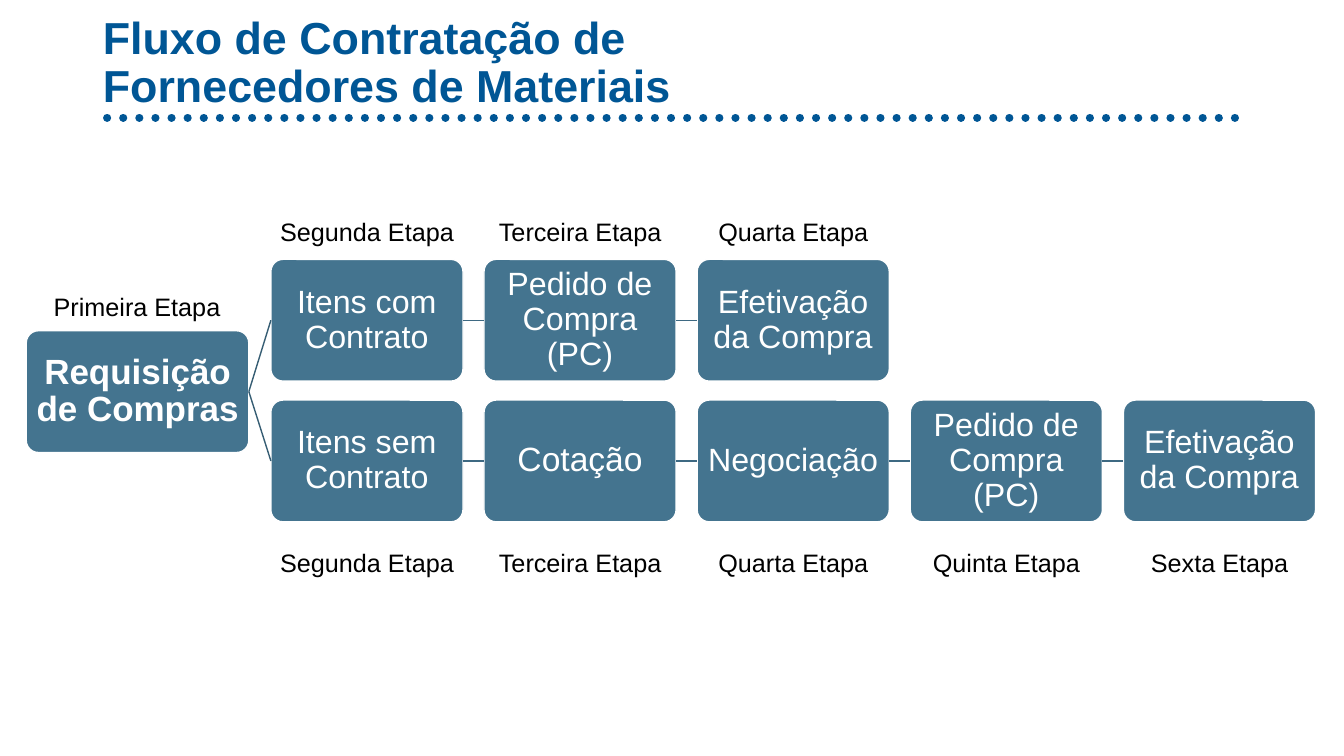
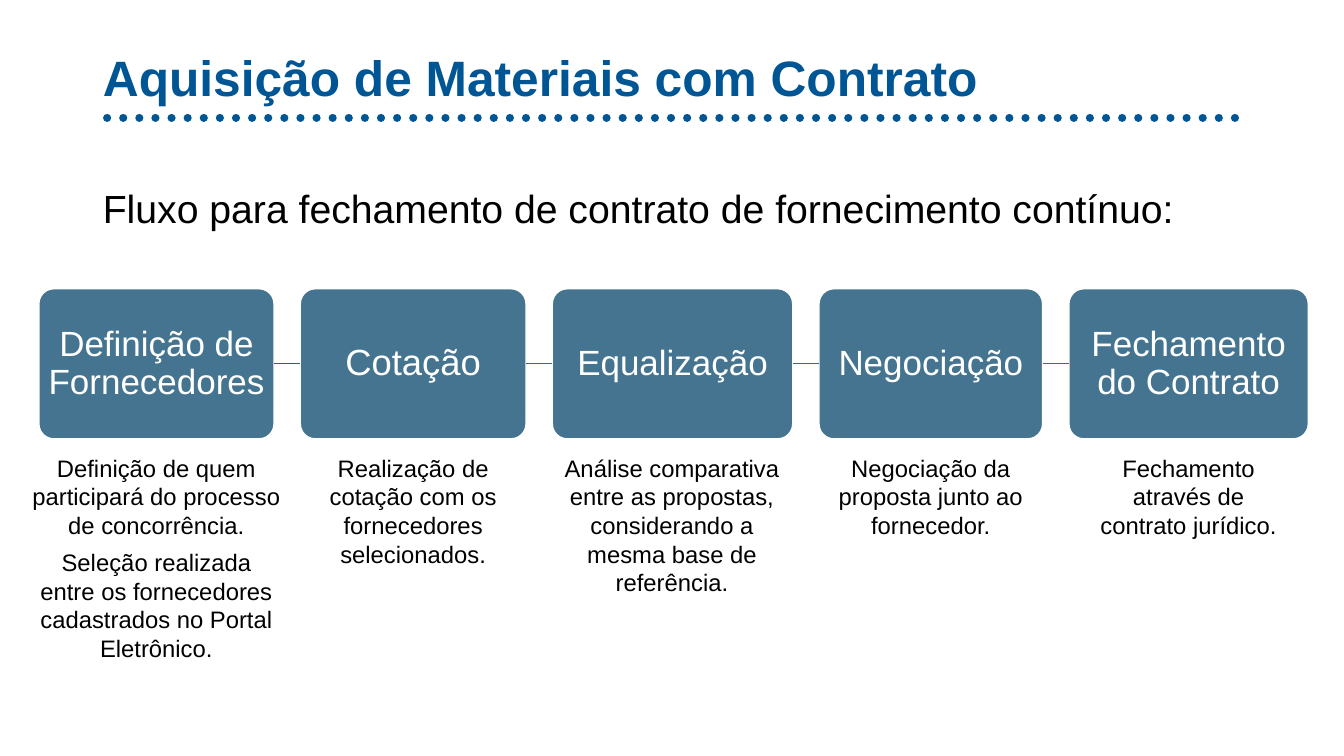
from copy import deepcopy
from dataclasses import dataclass

from pptx import Presentation
from pptx import util as u
from pptx.dml.color import RGBColor
from pptx.enum import dml, shapes, text
from pptx.oxml import ns
from pptx.oxml.xmlchemy import OxmlElement

PX = 9525  # EMU in one px, 96 px to the inch
LEFT, MID, JUST = text.PP_ALIGN.LEFT, text.PP_ALIGN.CENTER, text.PP_ALIGN.JUSTIFY


@dataclass(frozen=True)
class Theme:
    font: str = "Arial"
    blue: str = "005695"
    steel: str = "44748F"
    deep: str = "365D73"
    link: str = "3E6982"
    white: str = "FFFFFF"
    black: str = "000000"
    label: float = 18
    note: float = 17
    lead: float = 28
    step: float = 23
    stage: float = 25


@dataclass(frozen=True)
class Rect:
    x: int
    y: int
    w: int
    h: int

    def emu(self) -> tuple:
        return tuple(u.Emu(n * PX) for n in (self.x, self.y, self.w, self.h))

    def under(self, y: int, w: int, h: int) -> "Rect":
        """Area of the given size, centred on this one across the slide."""
        return Rect(self.x + (self.w - w) // 2, y, w, h)


@dataclass(frozen=True)
class Step:
    name: str
    label: str
    size: float = 23


@dataclass(frozen=True)
class Stage:
    name: str
    wide: int
    span: int  # width of the notes
    notes: tuple
    size: float = 25


T = Theme()


# Text and drawing helpers
def rgb(code: str) -> RGBColor:
    return RGBColor.from_string(code)


def write(frame, *paras: str, size: float, color: str = T.black, bold: bool = False,
          align=MID, lead: float = 1.0, after: float = 0,
          anchor=text.MSO_ANCHOR.TOP, inset: tuple = (10, 5)) -> None:
    frame.word_wrap = True
    frame.auto_size = text.MSO_AUTO_SIZE.NONE
    frame.vertical_anchor = anchor
    frame.margin_left = frame.margin_right = u.Emu(inset[0] * PX)
    frame.margin_top = frame.margin_bottom = u.Emu(inset[1] * PX)
    for i, words in enumerate(paras):
        para = frame.add_paragraph() if i else frame.paragraphs[0]
        para.text = words
        para.alignment, para.line_spacing = align, lead
        para.space_before, para.space_after = u.Pt(0), u.Pt(after)
        for run in para.runs:
            font = run.font
            font.name, font.size, font.bold = T.font, u.Pt(size), bold
            font.color.rgb = rgb(color)
        for gap in para._p.findall(ns.qn("a:br")):
            gap.append(deepcopy(para.runs[0]._r.rPr))


def add_text(slide, area: Rect, *paras: str, **style) -> None:
    write(slide.shapes.add_textbox(*area.emu()).text_frame, *paras, **style)


def add_line(slide, ends: tuple, color: str, wide: float):
    line = slide.shapes.add_connector(shapes.MSO_CONNECTOR.STRAIGHT,
                                      *(u.Emu(n * PX) for n in ends))
    line.line.color.rgb, line.line.width = rgb(color), u.Pt(wide)
    line._element.spPr.append(OxmlElement("a:effectLst"))
    return line


def add_box(slide, area: Rect, words: str, size: float, bold: bool = False):
    box = slide.shapes.add_shape(shapes.MSO_SHAPE.ROUNDED_RECTANGLE, *area.emu())
    box.adjustments[0] = 0.1
    box.shadow.inherit = False
    box.fill.solid()
    box.fill.fore_color.rgb = rgb(T.steel)
    box.line.color.rgb, box.line.width = rgb(T.white), u.Pt(1)
    write(box.text_frame, words, size=size, color=T.white, bold=bold, lead=0.9,
          anchor=text.MSO_ANCHOR.MIDDLE, inset=(2, 2))
    return box


def join(slide, start, end, color: str) -> None:
    line = add_line(slide, (0, 0, 0, 0), color, 1)
    line.begin_connect(start, 3)
    line.end_connect(end, 1)


def add_slide(deck, title: str, area: Rect, size: float):
    slide = deck.slides.add_slide(deck.slide_layouts[5])
    rule = add_line(slide, (102, 112, 1187, 112), T.blue, 5.75).line
    rule.dash_style = dml.MSO_LINE.ROUND_DOT
    rule._get_or_add_ln().set("cap", "rnd")
    head = slide.shapes.title
    head.left, head.top, head.width, head.height = area.emu()
    write(head.text_frame, title, size=size, color=T.blue, bold=True, align=LEFT,
          lead=0.9, anchor=text.MSO_ANCHOR.MIDDLE)
    return slide


# Slide 1: two branches from one request
def add_label(slide, area: Rect, y: int, words: str) -> None:
    add_text(slide, area.under(y, 195, 48), words, size=T.label, lead=1.6, after=9)


def add_branch(slide, root, y: int, tag: int, steps: tuple) -> None:
    last, color = root, T.deep
    for i, step in enumerate(steps):
        area = Rect(258 + 203 * i, y, 183, 116)
        box = add_box(slide, area, step.name, step.size)
        join(slide, last, box, color)
        add_label(slide, area, tag, step.label)
        last, color = box, T.link


def hiring(deck) -> None:
    slide = add_slide(deck, "Fluxo de Contratação de\nFornecedores de Materiais",
                      Rect(88, 28, 1104, 66), 32)
    first = Rect(25, 315, 212, 116)
    root = add_box(slide, first, "Requisição de Compras", T.stage, bold=True)
    add_label(slide, first, 255, "Primeira Etapa")
    order, close = "Pedido de Compra (PC)", "Efetivação da Compra"
    add_branch(slide, root, 247, 184, (
        Step("Itens com Contrato", "Segunda Etapa"),
        Step(order, "Terceira Etapa"),
        Step(close, "Quarta Etapa")))
    add_branch(slide, root, 381, 499, (
        Step("Itens sem Contrato", "Segunda Etapa"),
        Step("Cotação", "Terceira Etapa", 24),
        Step("Negociação", "Quarta Etapa"),
        Step(order, "Quinta Etapa"),
        Step(close, "Sexta Etapa")))


# Slide 2: one row of stages with notes
STAGES = (
    Stage("Definição de Fornecedores", 224, 258, (
        "Definição de quem participará do processo de concorrência.",
        "Seleção realizada entre os fornecedores cadastrados no Portal Eletrônico.")),
    Stage("Cotação", 215, 195, (
        "Realização de cotação com os fornecedores selecionados.",), 26),
    Stage("Equalização", 229, 228, (
        "Análise comparativa entre as propostas, considerando a mesma base de referência.",)),
    Stage("Negociação", 213, 197, (
        "Negociação da proposta junto ao fornecedor.",)),
    Stage("Fechamento do Contrato", 228, 202, (
        "Fechamento através de contrato jurídico.",)),
)


def buying(deck) -> None:
    slide = add_slide(deck, "Aquisição de Materiais com Contrato",
                      Rect(88, 44, 1118, 66), 35.5)
    add_text(slide, Rect(88, 144, 1104, 90),
             "Fluxo para fechamento de contrato de fornecimento contínuo:",
             size=T.lead, align=JUST, lead=1.6, after=9)
    x, gap, last = 37, 25, None
    for i, stage in enumerate(STAGES):
        area = Rect(x, 275, stage.wide, 143)
        box = add_box(slide, area, stage.name, stage.size)
        if last:
            join(slide, last, box, T.deep if i == 1 else T.link)
        add_text(slide, area.under(427, stage.span, 240), *stage.notes,
                 size=T.note, after=6)
        x, last = x + stage.wide + gap, box


def main() -> None:
    deck = Presentation()
    deck.slide_width, deck.slide_height = u.Emu(1280 * PX), u.Emu(720 * PX)
    hiring(deck)
    buying(deck)
    deck.save("out.pptx")


if __name__ == "__main__":
    main()
